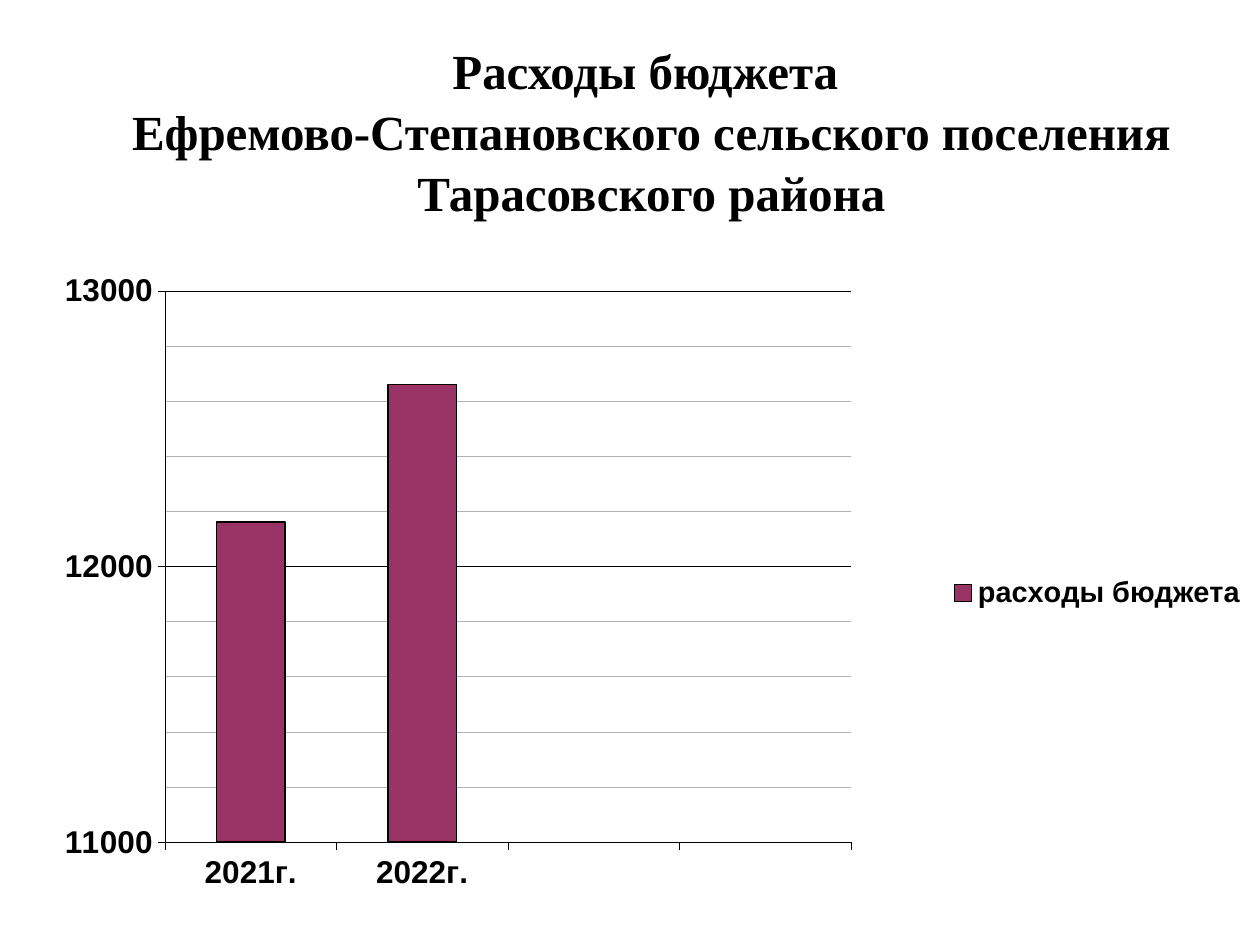
from lxml import etree
from pptx import Presentation
from pptx.chart.data import CategoryChartData
from pptx.dml.color import RGBColor
from pptx.enum.chart import XL_CHART_TYPE, XL_LEGEND_POSITION, XL_TICK_LABEL_POSITION, XL_TICK_MARK
from pptx.enum.text import MSO_ANCHOR, PP_ALIGN
from pptx.oxml.ns import qn
from pptx.util import Inches, Pt

COLUMNS = XL_CHART_TYPE.COLUMN_CLUSTERED
RIGHT = XL_LEGEND_POSITION.RIGHT
LOW = XL_TICK_LABEL_POSITION.LOW
OUTSIDE = XL_TICK_MARK.OUTSIDE
NO_TICK = XL_TICK_MARK.NONE
CENTER = PP_ALIGN.CENTER
TOP = MSO_ANCHOR.TOP

WIDTH, HEIGHT = Inches(10), Inches(7.5)
COLORS = {"ink": "000000", "bar": "993366", "minor_grid": "B3B3B3"}
TITLE = [
    "Расходы бюджета ",
    "Ефремово-Степановского сельского поселения",
    "Тарасовского района",
]
YEARS = ["2021г.", "2022г.", "", ""]
EXPENSES = [12160, 12660, None, None]
PLOT_AREA = {"x": 0.09, "y": 0.04, "w": 0.57, "h": 0.84}


def color(name):
    return RGBColor.from_string(COLORS[name])


def style_font(font, size, name="Arial"):
    font.name, font.size, font.bold = name, Pt(size), True
    font.color.rgb = color("ink")


def style_line(line, width, name="ink"):
    line.color.rgb = color(name)
    line.width = Pt(width)


def add_text(page, lines, left, top, width, height, size, font, spacing):
    box = page.shapes.add_textbox(left, top, width, height)
    frame = box.text_frame
    frame.word_wrap = True
    frame.vertical_anchor = TOP
    for index, text in enumerate(lines):
        para = frame.paragraphs[0] if index == 0 else frame.add_paragraph()
        para.alignment = CENTER
        para.line_spacing = spacing
        span = para.add_run()
        span.text = text
        style_font(span.font, size, font)


def style_axis(axis):
    axis.major_tick_mark = OUTSIDE
    axis.minor_tick_mark = NO_TICK
    style_font(axis.tick_labels.font, 18)
    style_line(axis.format.line, 0.25)


def add_minor_gridlines(axis, width, name):
    """Show minor gridlines and write their line format as XML."""
    axis.has_minor_gridlines = True
    gridlines = axis._element.find(qn("c:minorGridlines"))
    properties = etree.SubElement(gridlines, qn("c:spPr"))
    line = etree.SubElement(properties, qn("a:ln"), w=str(Pt(width)))
    fill = etree.SubElement(line, qn("a:solidFill"))
    etree.SubElement(fill, qn("a:srgbClr"), val=COLORS[name])


def place_plot(chart, area):
    """Fix the inner plot area, given as shares of the chart's size."""
    plot_area = chart._chartSpace.chart.plotArea
    for old in plot_area.findall(qn("c:layout")):
        plot_area.remove(old)
    layout = etree.Element(qn("c:layout"))
    manual = etree.SubElement(layout, qn("c:manualLayout"))
    settings = {"layoutTarget": "inner", "xMode": "edge", "yMode": "edge", **area}
    for tag, value in settings.items():
        etree.SubElement(manual, qn("c:" + tag)).set("val", str(value))
    plot_area.insert(0, layout)


def add_column_chart(page, left, top, width, height):
    data = CategoryChartData()
    data.categories = YEARS
    data.add_series("расходы бюджета", EXPENSES)
    chart = page.shapes.add_chart(COLUMNS, left, top, width, height, data).chart
    chart.has_title = False
    style_font(chart.font, 18)

    # Columns
    plot = chart.plots[0]
    plot.vary_by_categories = False
    plot.gap_width = 150
    series = plot.series[0]
    series.format.fill.solid()
    series.format.fill.fore_color.rgb = color("bar")
    style_line(series.format.line, 1)

    # Axes and gridlines
    style_axis(chart.category_axis)
    chart.category_axis.tick_label_position = LOW
    values = chart.value_axis
    style_axis(values)
    values.minimum_scale, values.maximum_scale = 11000, 13000
    values.major_unit, values.minor_unit = 1000, 200
    values.has_major_gridlines = True
    style_line(values.major_gridlines.format.line, 0.25)
    add_minor_gridlines(values, 0.25, "minor_grid")

    # Legend
    chart.has_legend = True
    chart.legend.position = RIGHT
    chart.legend.include_in_layout = False
    style_font(chart.legend.font, 16.5)

    place_plot(chart, PLOT_AREA)


def main():
    deck = Presentation()
    deck.slide_width, deck.slide_height = WIDTH, HEIGHT
    page = deck.slides.add_slide(deck.slide_layouts[6])

    # Heading
    add_text(page, TITLE, Inches(0.67), Inches(0.25), Inches(9), Inches(1.91),
             size=28, font="Times New Roman", spacing=1.04)

    # Budget expenses by year
    add_column_chart(page, Inches(0.45), Inches(2.1), Inches(9.55), Inches(5.21))

    deck.save("out.pptx")


if __name__ == "__main__":
    main()
